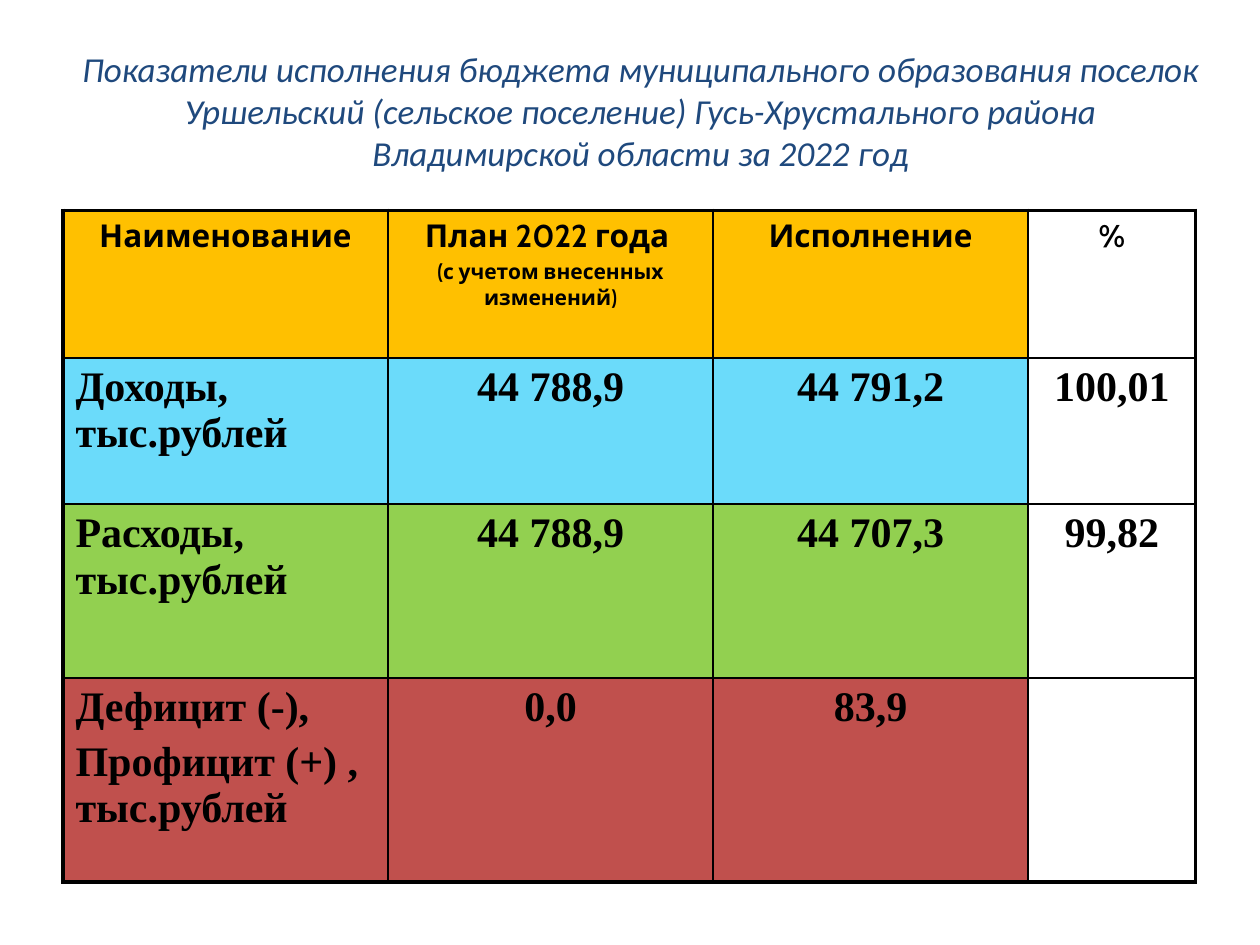
import pptx
import pptx.dml.color
import pptx.enum.text
import pptx.oxml
import pptx.util
from pptx.util import Inches

BLACK = "000000"
ALIGN = pptx.enum.text.PP_ALIGN

TITLE = ("Показатели исполнения бюджета муниципального образования поселок "
         "Уршельский (сельское поселение) Гусь-Хрустального района "
         "Владимирской области за 2022 год")
COLUMN_WIDTHS = [2.58, 2.58, 2.5, 1.33]
ROW_HEIGHTS = [1.17, 1.16, 1.38, 1.62]
ROW_FILLS = ["FFC000", "6BDBFA", "92D050", "C0504D"]
BUDGET = [
    ["Наименование", "План 2022 года \n(с учетом внесенных изменений)", "Исполнение", "%"],
    ["Доходы, тыс.рублей", "44 788,9", "44 791,2", "100,01"],
    ["Расходы, тыс.рублей", "44 788,9", "44 707,3", "99,82"],
    ["Дефицит (-),\nПрофицит (+) , тыс.рублей", "0,0", "83,9", ""],
]


def rgb(color):
    return pptx.dml.color.RGBColor.from_string(color)


class BudgetSlide:
    """Holds the slide and the style of its elements."""

    header_font, header_size, note_size = "Cabin", 18, 12
    body_font, body_size = "Times New Roman", 24
    inner_line, outer_line = 1, 2.25

    def __init__(self, prs):
        self.slide = prs.slides.add_slide(prs.slide_layouts[5])

    def format_runs(self, p, font, size, color, bold=False, italic=False):
        for r in p.runs:
            r.font.name = font
            r.font.size = pptx.util.Pt(size)
            r.font.color.rgb = rgb(color)
            r.font.bold = bold
            r.font.italic = italic

    def title(self, text, left, top, width, height):
        sp = self.slide.shapes.title
        sp.left, sp.top = Inches(left), Inches(top)
        sp.width, sp.height = Inches(width), Inches(height)
        tf = sp.text_frame
        tf.text = text
        tf.word_wrap = True
        tf.auto_size = pptx.enum.text.MSO_AUTO_SIZE.SHAPE_TO_FIT_TEXT
        p = tf.paragraphs[0]
        p.alignment = ALIGN.CENTER
        self.format_runs(p, "Calibri", 20, "1F497D", italic=True)

    def borders(self, cell, outer_sides):
        """Draw all four cell borders, thicker on the table's outer sides."""
        tc_pr = cell._tc.get_or_add_tcPr()
        for side in "LRTB":
            points = self.outer_line if side in outer_sides else self.inner_line
            tc_pr.append(pptx.oxml.parse_xml(
                f'<a:ln{side} xmlns:a="http://schemas.openxmlformats.org/drawingml/2006/main"'
                f' w="{pptx.util.Pt(points)}"><a:solidFill><a:srgbClr val="{BLACK}"/>'
                f'</a:solidFill></a:ln{side}>'))

    def cell_text(self, cell, text, header, centered):
        cell.text_frame.text = text
        for i, p in enumerate(cell.text_frame.paragraphs):
            if header:
                font, size = self.header_font, self.note_size if i else self.header_size
            else:
                font, size = self.body_font, self.body_size
            p.alignment = ALIGN.CENTER if centered else ALIGN.LEFT
            p.space_before = pptx.util.Pt(0.2 * size)
            self.format_runs(p, font, size, BLACK, bold=True)

    def table(self, rows, left, top, widths, heights, fills):
        last_row, last_col = len(rows) - 1, len(widths) - 1
        table = self.slide.shapes.add_table(
            len(rows), len(widths), Inches(left), Inches(top),
            Inches(sum(widths)), Inches(sum(heights))).table
        for column, width in zip(table.columns, widths):
            column.width = Inches(width)
        for i, texts in enumerate(rows):
            table.rows[i].height = Inches(heights[i])
            for j, text in enumerate(texts):
                cell = table.cell(i, j)
                edges = {"L": j == 0, "R": j == last_col, "T": i == 0, "B": i == last_row}
                self.borders(cell, [side for side, outer in edges.items() if outer])
                if j == last_col:
                    cell.fill.background()
                else:
                    cell.fill.solid()
                    cell.fill.fore_color.rgb = rgb(fills[i])
                self.cell_text(cell, text, header=i == 0, centered=i == 0 or j > 0)


def main():
    prs = pptx.Presentation()
    prs.slide_width, prs.slide_height = Inches(10), Inches(7.5)
    s = BudgetSlide(prs)
    s.table(BUDGET, 0.5, 1.67, COLUMN_WIDTHS, ROW_HEIGHTS, ROW_FILLS)
    s.title(TITLE, 0.5, 0.33, 9.17, 1.1)
    prs.save("out.pptx")


if __name__ == "__main__":
    main()
